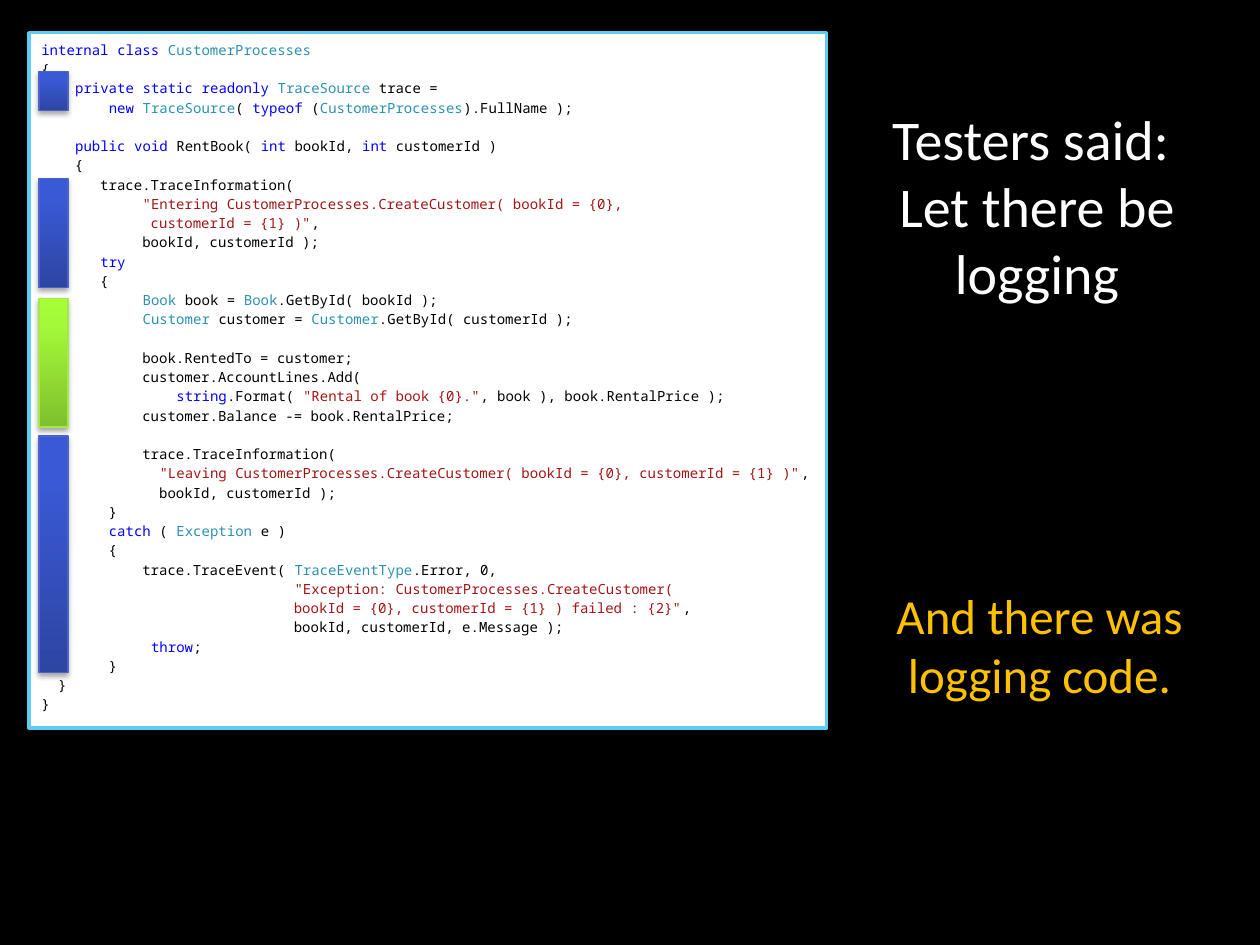
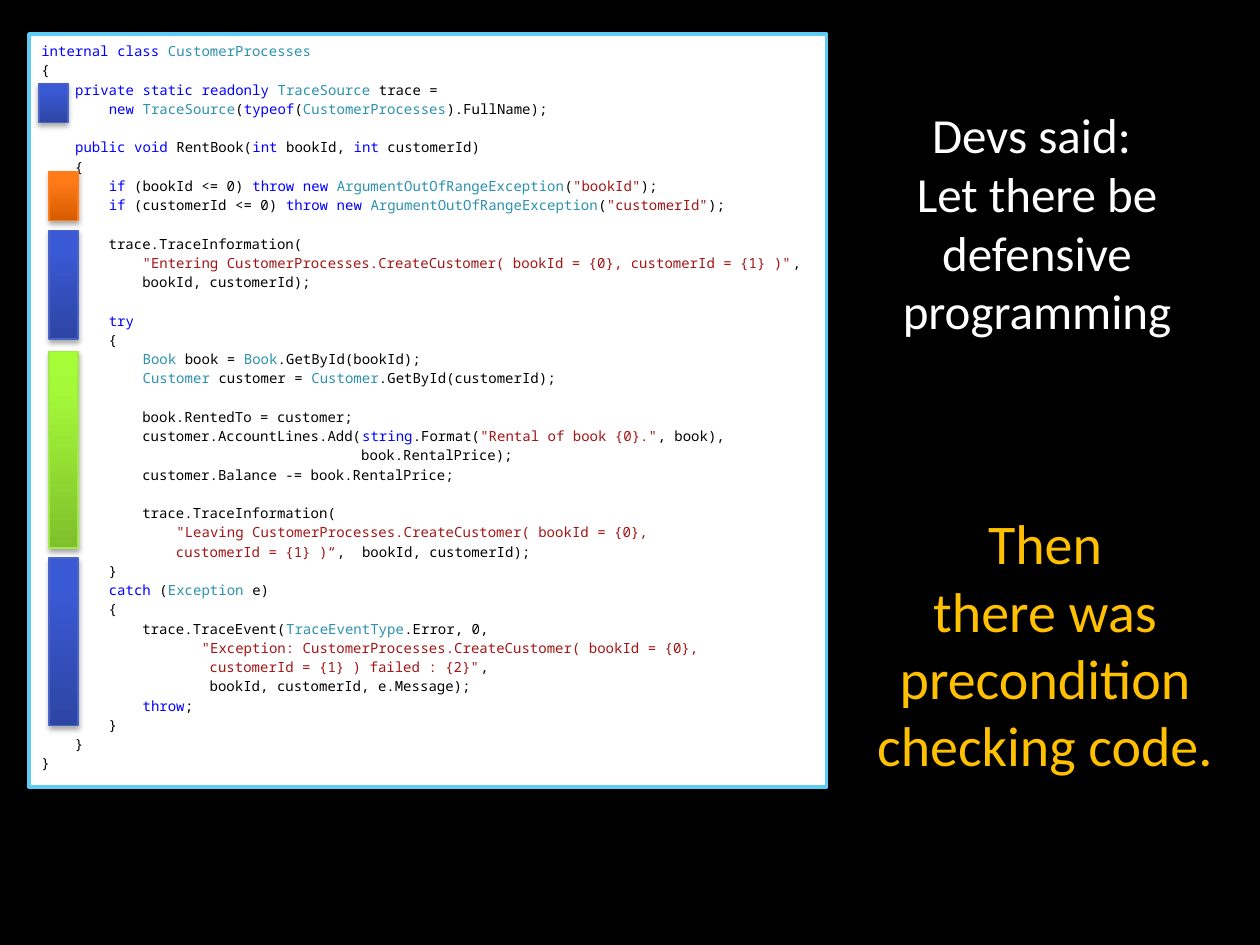
from copy import deepcopy
from itertools import groupby

from lxml.etree import SubElement
from pptx import Presentation
from pptx.dml.color import RGBColor as RGB
from pptx.enum.shapes import MSO_SHAPE as SHAPE
from pptx.enum.text import MSO_ANCHOR as ANCHOR, PP_ALIGN as ALIGN
from pptx.oxml.ns import qn
from pptx.util import Inches, Pt

COLOURS = {
    "background": "000000", "panel": "FFFFFF", "panel edge": "5ECCF3",
    "request": "FFFFFF", "result": "FFC000", "shadow": "000000",
    "plain": "000000", "keyword": "0000FF", "type": "2B91AF", "literal": "A31515",
}
# Bar colours: gradient from bottom to top, then the edge
BARS = {
    "logging": (("2D45A3", "3A59D4", "3758D7"), "4963C7"),
    "business": (("7FC02C", "A4F939", "A6FE36"), "A4E94C"),
    "checking": (("D75C00", "FF7B18", "FF7C19"), "FF7C1B"),
}
STOPS = (0, 0.8, 1)

KEYWORDS = ("internal class private static readonly new typeof public void int "
            "try string catch throw if").split()
TYPES = ("CustomerProcesses TraceSource Book Customer Exception TraceEventType "
         "ArgumentOutOfRangeException").split()
KINDS = {**dict.fromkeys(KEYWORDS, "keyword"), **dict.fromkeys(TYPES, "type")}
QUOTES = '"“'

CLASS_HEAD = [
    'internal class CustomerProcesses',
    '{',
    '    private static readonly TraceSource trace =',
]

LOGGING_CODE = CLASS_HEAD + [
    '        new TraceSource( typeof (CustomerProcesses).FullName );',
    '',
    '    public void RentBook( int bookId, int customerId )',
    '    {',
    '       trace.TraceInformation(',
    '            "Entering CustomerProcesses.CreateCustomer( bookId = {0},',
    '             customerId = {1} )",',
    '            bookId, customerId );',
    '       try',
    '       {',
    '            Book book = Book.GetById( bookId );',
    '            Customer customer = Customer.GetById( customerId );',
    '',
    '            book.RentedTo = customer;',
    '            customer.AccountLines.Add(',
    '                string.Format( "Rental of book {0}.", book ), book.RentalPrice );',
    '            customer.Balance -= book.RentalPrice;',
    '',
    '            trace.TraceInformation(',
    '              "Leaving CustomerProcesses.CreateCustomer( bookId = {0}, customerId = {1} )",',
    '              bookId, customerId );',
    '        }',
    '        catch ( Exception e )',
    '        {',
    '            trace.TraceEvent( TraceEventType.Error, 0,',
    '                              "Exception: CustomerProcesses.CreateCustomer(',
    '                              bookId = {0}, customerId = {1} ) failed : {2}",',
    '                              bookId, customerId, e.Message );',
    '             throw;',
    '        }',
    '  }',
    '}',
]

DEFENSIVE_CODE = CLASS_HEAD + [
    '        new TraceSource(typeof(CustomerProcesses).FullName);',
    '',
    '    public void RentBook(int bookId, int customerId)',
    '    {',
    '        if (bookId <= 0) throw new ArgumentOutOfRangeException("bookId");',
    '        if (customerId <= 0) throw new ArgumentOutOfRangeException("customerId");',
    '',
    '        trace.TraceInformation(',
    '            "Entering CustomerProcesses.CreateCustomer( bookId = {0}, customerId = {1} )",',
    '            bookId, customerId);',
    '',
    '        try',
    '        {',
    '            Book book = Book.GetById(bookId);',
    '            Customer customer = Customer.GetById(customerId);',
    '',
    '            book.RentedTo = customer;',
    '            customer.AccountLines.Add(string.Format("Rental of book {0}.", book),',
    '                                      book.RentalPrice);',
    '            customer.Balance -= book.RentalPrice;',
    '',
    '            trace.TraceInformation(',
    '                "Leaving CustomerProcesses.CreateCustomer( bookId = {0},',
    '                customerId = {1} )“,  bookId, customerId);',
    '        }',
    '        catch (Exception e)',
    '        {',
    '            trace.TraceEvent(TraceEventType.Error, 0,',
    '                   "Exception: CustomerProcesses.CreateCustomer( bookId = {0},',
    '                    customerId = {1} ) failed : {2}",',
    '                    bookId, customerId, e.Message);',
    '            throw;',
    '        }',
    '    }',
    '}',
]

# Captions: words, colour, size, box in inches. Bars: kind, indent, first row, rows.
SLIDES = [
    {
        "code": LOGGING_CODE, "top": 0.26,
        "captions": [
            ("Testers said: \nLet there be logging", "request", 32, (6.97, 0.78, 2.52, 1.72)),
            ("And there was logging code.", "result", 28, (6.81, 4.6, 2.88, 1.04)),
        ],
        "bars": [("logging", 0, 1.7, 2.03), ("logging", 0, 7.26, 5.63),
                 ("business", 0, 13.48, 6.68), ("logging", 0, 20.62, 12.3)],
    },
    {
        "code": DEFENSIVE_CODE, "top": 0.27,
        "captions": [
            ("Devs said: \nLet there be defensive programming", "request", 28,
             (6.97, 0.78, 2.52, 1.99)),
            ("Then\nthere was precondition checking code.", "result", 32,
             (6.81, 3.99, 2.97, 2.26)),
        ],
        "bars": [("logging", 0, 2.23, 2.03), ("checking", 1, 6.81, 2.55),
                 ("logging", 1, 9.88, 5.63), ("business", 1, 16.17, 10.21),
                 ("logging", 1, 26.9, 8.7)],
    },
]

ROW_PT = 11
ROW = ROW_PT / 72
PANEL_LEFT, PANEL_WIDTH, PANEL_PAD = 0.23, 6.33, 0.17
INSET = 0.05
BAR_LEFT, BAR_WIDTH, BAR_INDENT = 0.31, 0.23, 0.08


def style_run(r, font, size, colour):
    for name, value in {"name": font, "size": Pt(size)}.items():
        setattr(r.font, name, value)
    r.font.color.rgb = RGB.from_string(COLOURS[colour])


def add_rect(s, box, edge, width):
    sp = s.shapes.add_shape(SHAPE.RECTANGLE, *map(Inches, box))
    sp.shadow.inherit = False
    sp.line.color.rgb = RGB.from_string(edge)
    sp.line.width = Pt(width)
    return sp


def add_caption(s, words, colour, size, box):
    tf = s.shapes.add_textbox(*map(Inches, box)).text_frame
    tf.word_wrap = True
    p = tf.paragraphs[0]
    p.text = words
    p.alignment = ALIGN.CENTER
    for r in p.runs:
        style_run(r, "Calibri", size, colour)


def colour_pieces(line, in_literal):
    """Split a line of code into (kind, text); in_literal tells if it starts inside quotes."""
    pieces = []
    for is_word, chars in groupby(line, str.isalnum):
        for piece in ["".join(chars)] if is_word else chars:
            quote = piece in QUOTES
            kind = "literal" if in_literal or quote else KINDS.get(piece, "plain")
            pieces.append((kind, piece))
            in_literal ^= quote
    merged = [(kind, "".join(text for _, text in group))
              for kind, group in groupby(pieces, lambda piece: piece[0])]
    return merged, in_literal


def add_code(s, lines, top):
    box = PANEL_LEFT, top, PANEL_WIDTH, len(lines) * ROW + PANEL_PAD
    sp = add_rect(s, box, COLOURS["panel edge"], 2)
    sp.fill.solid()
    sp.fill.fore_color.rgb = RGB.from_string(COLOURS["panel"])
    tf = sp.text_frame
    tf.word_wrap = True
    tf.vertical_anchor = ANCHOR.TOP
    in_literal, gap = False, 0
    for i, line in enumerate(lines):
        if not line:
            gap += ROW_PT
            continue
        p = tf.add_paragraph() if i else tf.paragraphs[0]
        layout = {"alignment": ALIGN.LEFT, "line_spacing": 1.15, "space_before": Pt(gap)}
        for name, value in layout.items():
            setattr(p, name, value)
        gap = 0
        pieces, in_literal = colour_pieces(line, in_literal)
        for kind, text in pieces:
            r = p.add_run()
            r.text = text
            style_run(r, "Noto Sans Mono", 8, kind)


def add_bar(s, top, kind, indent, first_row, rows):
    colours, edge = BARS[kind]
    box = (BAR_LEFT + indent * BAR_INDENT, top + INSET + first_row * ROW,
           BAR_WIDTH, rows * ROW)
    sp = add_rect(s, box, edge, 0.75)
    sp.fill.gradient()
    sp.fill.gradient_angle = 90
    spPr = sp._element.spPr
    stops = spPr.find(qn("a:gradFill")).find(qn("a:gsLst"))
    stops.append(deepcopy(stops[0]))
    for stop, position, colour in zip(sp.fill.gradient_stops, STOPS, colours):
        stop.position = position
        stop.color.rgb = RGB.from_string(colour)
    shadow = SubElement(spPr.find(qn("a:effectLst")), qn("a:outerShdw"),
                        blurRad=str(Pt(3.1)), dist=str(Pt(1.8)), dir="5400000", rotWithShape="0")
    tint = SubElement(shadow, qn("a:srgbClr"), val=COLOURS["shadow"])
    SubElement(tint, qn("a:alpha"), val="35000")


def main():
    prs = Presentation()
    prs.slide_width, prs.slide_height = Inches(10), Inches(7.5)
    for content in SLIDES:
        s = prs.slides.add_slide(prs.slide_layouts[6])
        s.background.fill.solid()
        s.background.fill.fore_color.rgb = RGB.from_string(COLOURS["background"])
        for caption in content["captions"]:
            add_caption(s, *caption)
        add_code(s, content["code"], content["top"])
        for bar in content["bars"]:
            add_bar(s, content["top"], *bar)
    prs.save("out.pptx")


if __name__ == "__main__":
    main()
